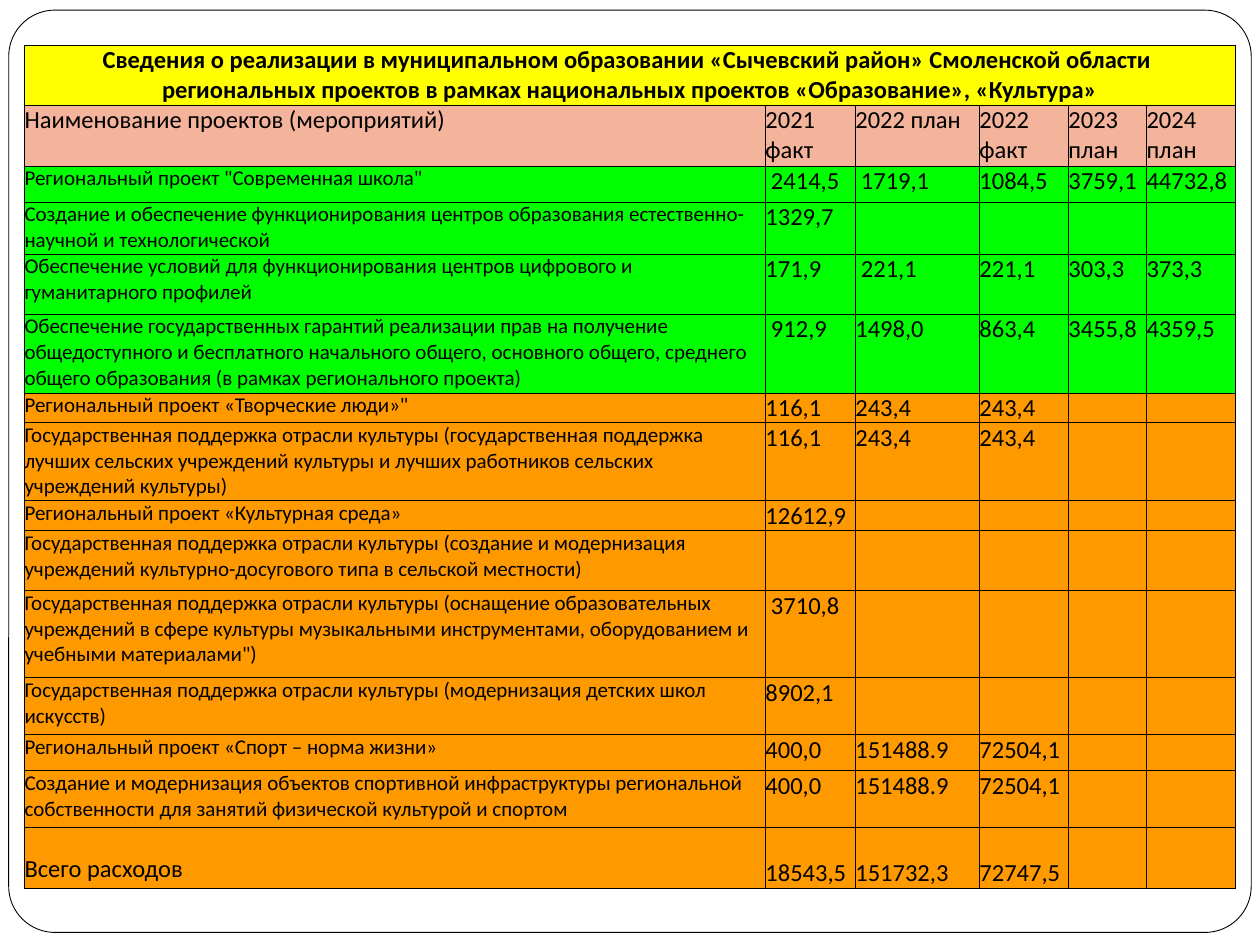
from lxml.etree import SubElement
from pptx import Presentation
from pptx.dml.color import RGBColor
from pptx.enum.shapes import MSO_SHAPE
from pptx.enum.text import MSO_ANCHOR, PP_ALIGN
from pptx.oxml.ns import qn
from pptx.util import Pt

FONT = "Calibri"
BLACK, WHITE = "000000", "FFFFFF"
YELLOW, PINK, GREEN, ORANGE = "FFFF00", "F4B39B", "00FF00", "FF9900"
LINE_WIDTH = 0.5
COLUMN_WIDTHS = [423.4, 51.4, 70.9, 50.9, 44.6, 50.9]
TITLE_HEIGHT, HEADER_HEIGHT, TOTAL_HEIGHT = 34.3, 34.8, 34.3

TITLE = [
    "Сведения о реализации в муниципальном образовании «Сычевский район» Смоленской области ",
    "региональных проектов в рамках национальных проектов «Образование», «Культура»",
]
HEADER = ["Наименование проектов (мероприятий)", "2021 факт", "2022 план",
          "2022 факт", "2023 план", "2024 план"]
# Fill, row height, project name, values by year
PROJECTS = [
    (GREEN, 20.6, 'Региональный проект "Современная школа"',
     [" 2414,5", " 1719,1", "1084,5", "3759,1", "44732,8"]),
    (GREEN, 29.7, "Создание и обеспечение функционирования центров образования "
     "естественно-научной и технологической", ["1329,7"]),
    (GREEN, 34.3, "Обеспечение условий для функционирования центров цифрового и "
     "гуманитарного профилей", ["171,9", " 221,1", "221,1", "303,3", "373,3"]),
    (GREEN, 45.1, "Обеспечение государственных гарантий реализации прав на получение "
     "общедоступного и бесплатного начального общего, основного общего, среднего "
     "общего образования (в рамках регионального проекта)",
     [" 912,9", "1498,0", "863,4", "3455,8", "4359,5"]),
    (ORANGE, 17.1, 'Региональный проект «Творческие люди»"', ["116,1", "243,4", "243,4"]),
    (ORANGE, 44.6, "Государственная поддержка отрасли культуры (государственная поддержка "
     "лучших сельских учреждений культуры и лучших работников сельских "
     "учреждений культуры)", ["116,1", "243,4", "243,4"]),
    (ORANGE, 17.1, "Региональный проект «Культурная среда»", ["12612,9"]),
    (ORANGE, 34.3, "Государственная поддержка отрасли культуры (создание и модернизация "
     "учреждений культурно-досугового типа в сельской местности)", []),
    (ORANGE, 49.7, "Государственная поддержка отрасли культуры (оснащение образовательных "
     "учреждений в сфере культуры музыкальными инструментами, оборудованием и "
     'учебными материалами")', [" 3710,8"]),
    (ORANGE, 32.6, "Государственная поддержка отрасли культуры (модернизация детских школ "
     "искусств)", ["8902,1"]),
    (ORANGE, 20.6, "Региональный проект «Спорт – норма жизни»",
     ["400,0", "151488.9", "72504,1"]),
    (ORANGE, 32.6, "Создание и модернизация объектов спортивной инфраструктуры региональной "
     "собственности для занятий физической культурой и спортом",
     ["400,0", "151488.9", "72504,1"]),
]
TOTAL = ["Всего расходов", "18543,5", "151732,3", "72747,5"]


def color(hex_string):
    return RGBColor.from_string(hex_string)


def add_frame(slide):
    shape = slide.shapes.add_shape(MSO_SHAPE.ROUNDED_RECTANGLE,
                                   Pt(5), Pt(5.8), Pt(710), Pt(527))
    shape.adjustments[0] = 0.05
    shape.shadow.inherit = False
    shape.fill.solid()
    shape.fill.fore_color.rgb = color(WHITE)
    shape.line.color.rgb = color(BLACK)
    shape.line.width = Pt(LINE_WIDTH)


def style_cell(cell, fill):
    cell.margin_left = cell.margin_right = cell.margin_top = cell.margin_bottom = 0
    properties = cell._tc.get_or_add_tcPr()
    for side in ("a:lnL", "a:lnR", "a:lnT", "a:lnB"):
        border = SubElement(properties, qn(side), w=str(Pt(LINE_WIDTH)))
        border_fill = SubElement(border, qn("a:solidFill"))
        SubElement(border_fill, qn("a:srgbClr"), val=BLACK)
    cell.fill.solid()
    cell.fill.fore_color.rgb = color(fill)


def write_line(paragraph, text, size, bold=False):
    if not text:
        # Keeps an empty cell from stretching its row
        SubElement(paragraph._p, qn("a:endParaRPr"), sz=str(size * 100))
        return
    run = paragraph.add_run()
    run.text = text
    run.font.name = FONT
    run.font.size = Pt(size)
    run.font.bold = bold
    run.font.color.rgb = color(BLACK)


def fill_row(row, height, fill, texts, name_size=14):
    row.height = Pt(height)
    for index, cell in enumerate(row.cells):
        style_cell(cell, fill)
        text = texts[index] if index < len(texts) else ""
        write_line(cell.text_frame.paragraphs[0], text, 14 if index else name_size)


def fill_title(table):
    fill_row(table.rows[0], TITLE_HEIGHT, YELLOW, [])
    cell = table.cell(0, 0)
    cell.merge(table.cell(0, len(COLUMN_WIDTHS) - 1))
    frame = cell.text_frame
    frame.clear()
    for index, text in enumerate(TITLE):
        paragraph = frame.add_paragraph() if index else frame.paragraphs[0]
        paragraph.alignment = PP_ALIGN.CENTER
        write_line(paragraph, text, 14, bold=True)


def add_projects_table(slide):
    heights = [TITLE_HEIGHT, HEADER_HEIGHT, *(project[1] for project in PROJECTS), TOTAL_HEIGHT]
    table = slide.shapes.add_table(len(heights), len(COLUMN_WIDTHS), Pt(14), Pt(25.8),
                                   Pt(sum(COLUMN_WIDTHS)), Pt(sum(heights))).table
    table.first_row = table.horz_banding = False
    for column, width in zip(table.columns, COLUMN_WIDTHS):
        column.width = Pt(width)

    # Title and header
    fill_title(table)
    fill_row(table.rows[1], HEADER_HEIGHT, PINK, HEADER)

    # Projects
    for index, (fill, height, name, values) in enumerate(PROJECTS, start=2):
        fill_row(table.rows[index], height, fill, [name, *values], name_size=12)

    # Total, set at the foot of its row
    total_row = table.rows[len(heights) - 1]
    fill_row(total_row, TOTAL_HEIGHT, ORANGE, TOTAL)
    for cell in total_row.cells:
        cell.vertical_anchor = MSO_ANCHOR.BOTTOM
    total_row.cells[0].margin_bottom = Pt(2.5)


def main():
    presentation = Presentation()
    presentation.slide_width, presentation.slide_height = Pt(720), Pt(540)
    slide = presentation.slides.add_slide(presentation.slide_layouts[6])
    add_frame(slide)
    add_projects_table(slide)
    presentation.save("out.pptx")


if __name__ == "__main__":
    main()
